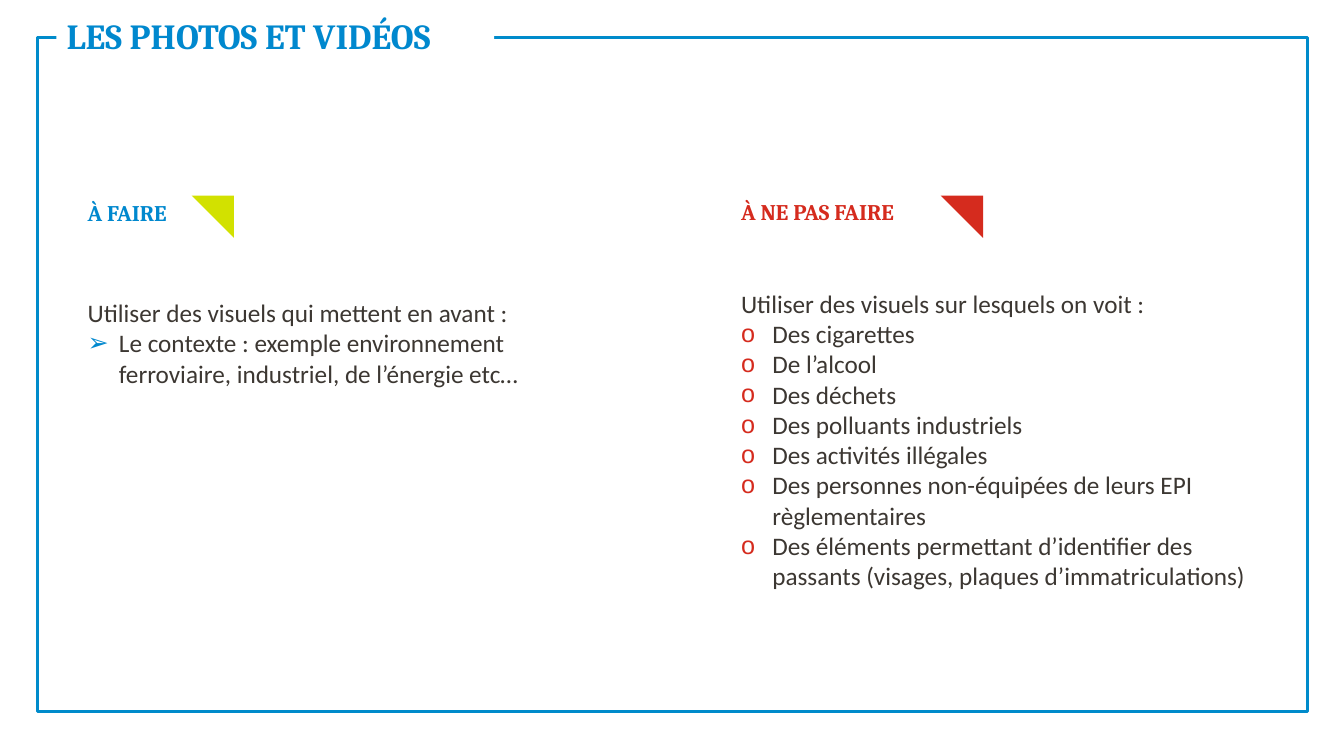
from dataclasses import dataclass
from lxml import etree
from pptx import Presentation
from pptx.dml.color import RGBColor
from pptx.enum import shapes, text
from pptx.oxml import ns
from pptx.util import Inches, Pt


@dataclass(frozen=True)
class Theme:
    frame: str = "008BCB"
    blue: str = "0088CE"
    red: str = "D52B1E"
    lime: str = "D2E100"
    ink: str = "3C3732"
    paper: str = "FFFFFF"
    serif: str = "Cambria"
    sans: str = "Calibri"
    title: float = 25.2
    head: float = 16
    body: float = 18


THEME = Theme()


def rgb(code):
    return RGBColor.from_string(code)


def place(shape, left, top, width, height):
    shape.left, shape.top = Inches(left), Inches(top)
    shape.width, shape.height = Inches(width), Inches(height)


def write(para, words, font, size, color, bold=False):
    para.alignment = text.PP_ALIGN.LEFT
    para.space_before = Pt(0)
    run = para.add_run()
    run.text = words
    run.font.name, run.font.size, run.font.bold = font, Pt(size), bold
    run.font.color.rgb = rgb(color)


def ready(holder, anchor):
    frame = holder.text_frame
    frame.word_wrap = True
    frame.auto_size = text.MSO_AUTO_SIZE.NONE
    frame.vertical_anchor = anchor
    return frame


def bullet(para, mark=None, color=None):
    props = para._p.get_or_add_pPr()
    indent = Inches(0.31) if mark else 0
    props.set("marL", str(indent))
    props.set("indent", str(-indent))
    if not mark:
        etree.SubElement(props, ns.qn("a:buNone"))
        return
    tint = etree.SubElement(props, ns.qn("a:buClr"))
    etree.SubElement(tint, ns.qn("a:srgbClr")).set("val", color)
    etree.SubElement(props, ns.qn("a:buChar")).set("char", mark)


# Blue border, interrupted by the title
def border(slide, left, top, width, height):
    box = slide.shapes.add_shape(
        shapes.MSO_SHAPE.RECTANGLE, *map(Inches, (left, top, width, height)))
    box.shadow.inherit = False
    box.fill.background()
    box.line.color.rgb = rgb(THEME.frame)
    box.line.width = Pt(2.25)
    title = slide.shapes.title
    title.element.addprevious(box.element)
    place(title, left + 0.19, top - 0.29, 4.34, 0.59)
    title.fill.solid()
    title.fill.fore_color.rgb = rgb(THEME.paper)
    para = ready(title, text.MSO_ANCHOR.MIDDLE).paragraphs[0]
    para.line_spacing = 0.9
    write(para, "LES PHOTOS ET VIDÉOS", THEME.serif, THEME.title, THEME.blue, True)


# Heading with its corner flag
def heading(slide, holder, left, top, words, color, flag, shift):
    place(holder, left, top, 2.32, 0.37)
    para = ready(holder, text.MSO_ANCHOR.TOP).paragraphs[0]
    bullet(para)
    write(para, words, THEME.serif, THEME.head, color, True)
    mark = slide.shapes.add_shape(
        shapes.MSO_SHAPE.RIGHT_TRIANGLE,
        Inches(left + shift), Inches(1.94), Inches(0.42), Inches(0.42))
    mark.rotation = 180
    mark.shadow.inherit = False
    mark.fill.solid()
    mark.fill.fore_color.rgb = rgb(flag)
    mark.line.fill.background()


# Introductory line followed by its bullets
def advice(holder, left, top, height, intro, items, mark, color):
    place(holder, left, top, 5.43, height)
    frame = ready(holder, text.MSO_ANCHOR.TOP)
    for index, words in enumerate([intro, *items]):
        para = frame.add_paragraph() if index else frame.paragraphs[0]
        bullet(para, mark if index else None, color)
        write(para, words, THEME.sans, THEME.body, THEME.ink)


def main():
    deck = Presentation()
    deck.slide_width, deck.slide_height = Inches(13.33), Inches(7.5)
    slide = deck.slides.add_slide(deck.slide_layouts.get_by_name("Comparison"))
    parts = slide.placeholders
    border(slide, 0.37, 0.37, 12.6, 6.69)

    # Left column: what to do
    heading(slide, parts[1], 0.77, 1.93, "À FAIRE", THEME.blue, THEME.lime, 1.13)
    advice(parts[2], 0.77, 2.9, 1.32,
           "Utiliser des visuels qui mettent en avant :",
           ["Le contexte : exemple environnement ferroviaire, industriel, "
            "de l’énergie etc…"],
           "➢", THEME.blue)

    # Right column: what to avoid
    heading(slide, parts[3], 7.25, 1.92, "À NE PAS FAIRE", THEME.red, THEME.red, 2.08)
    advice(parts[4], 7.25, 2.81, 4.04,
           "Utiliser des visuels sur lesquels on voit :",
           ["Des cigarettes",
            "De l’alcool",
            "Des déchets",
            "Des polluants industriels",
            "Des activités illégales",
            "Des personnes non-équipées de leurs EPI règlementaires",
            "Des éléments permettant d’identifier des passants "
            "(visages, plaques d’immatriculations)"],
           "o", THEME.red)
    deck.save("out.pptx")


if __name__ == "__main__":
    main()
